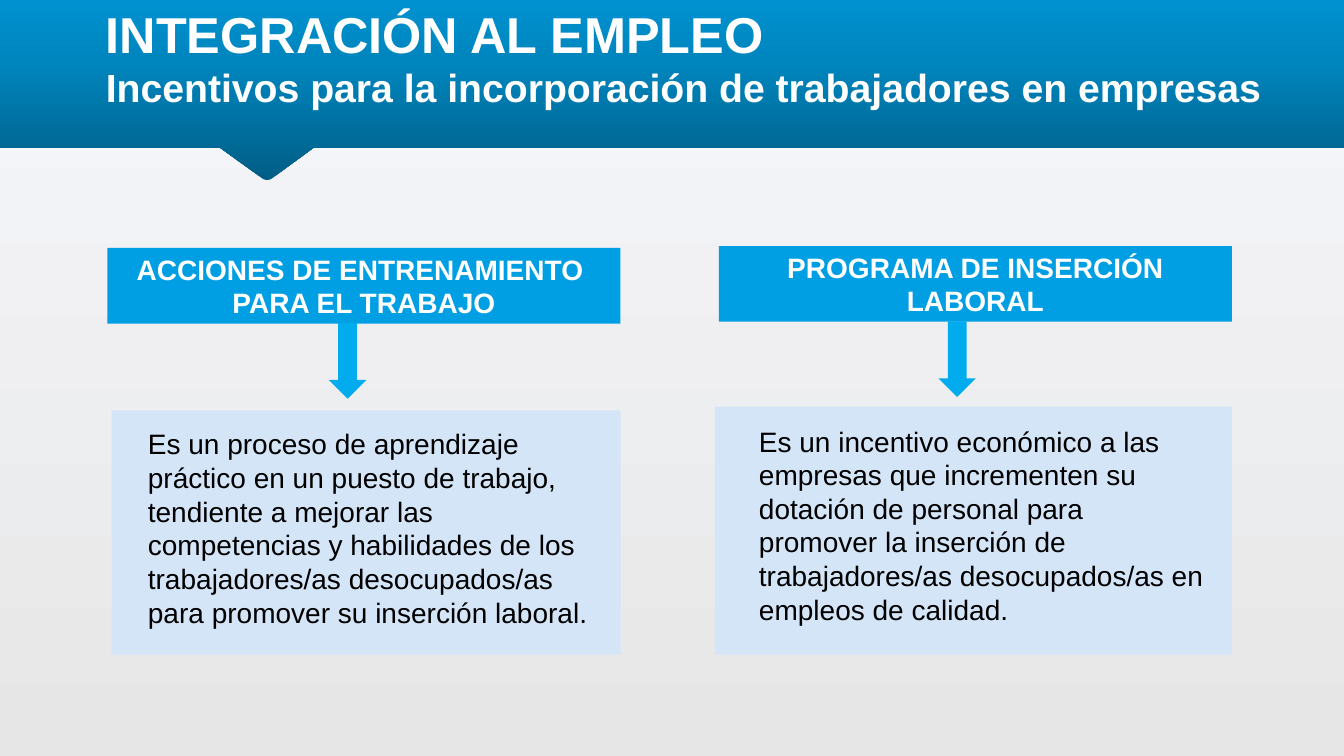
from copy import deepcopy

from pptx import Presentation
from pptx.dml.color import RGBColor
from pptx.enum.shapes import MSO_SHAPE
from pptx.enum.text import MSO_ANCHOR, MSO_AUTO_SIZE, PP_ALIGN
from pptx.oxml.ns import qn
from pptx.util import Pt

RECTANGLE = MSO_SHAPE.RECTANGLE
DOWN_ARROW = MSO_SHAPE.DOWN_ARROW
MIDDLE = MSO_ANCHOR.MIDDLE
LEFT, CENTER = PP_ALIGN.LEFT, PP_ALIGN.CENTER
NO_FIT, GROW = MSO_AUTO_SIZE.NONE, MSO_AUTO_SIZE.SHAPE_TO_FIT_TEXT

FONT = "Arial"
WIDTH, HEIGHT = 960, 540
COLORS = {
    "white": "FFFFFF", "subtitle": "FEFEFE", "text": "000000",
    "header": "009FE3", "arrow": "00ACED", "panel": "D4E5F7",
}
PAGE_STOPS = [(0.03, "F6F7FB"), (1, "E6E6E6")]
BANNER_STOPS = [(0, "005E86"), (0.5, "0086BF"), (1, "009FE3")]
BANNER_TOP, BANNER_BOTTOM = -43.2, 105.4
BANNER_OUTLINE = [
    (WIDTH, BANNER_TOP), (0, BANNER_TOP), (0, BANNER_BOTTOM),
    (157, BANNER_BOTTOM), (187.2, 127.4), (188.6, 128.2), (190.8, 128.7),
    (193, 128.2), (194.4, 127.4), (224.2, BANNER_BOTTOM),
    (WIDTH, BANNER_BOTTOM),
]

# Boxes are left, top, width, height in points.
COLUMNS = [
    {
        "header": ["ACCIONES DE ENTRENAMIENTO ", "PARA EL TRABAJO"],
        "header_box": (76.7, 177.1, 366.5, 54),
        "arrow_box": (234.9, 230.8, 26.8, 54),
        "panel_box": (79.7, 293.2, 363.6, 174.4),
        "body": "Es un proceso de aprendizaje práctico en un puesto de trabajo, "
                "tendiente a mejorar las competencias y habilidades de los "
                "trabajadores/as desocupados/as para promover su inserción laboral.",
        "body_box": (98.6, 301.4, 331.2, 152.6),
    },
    {
        "header": ["PROGRAMA DE INSERCIÓN LABORAL"],
        "header_box": (513.4, 175.8, 366.5, 54),
        "arrow_box": (670.3, 229.6, 26.8, 54),
        "panel_box": (510.6, 290.4, 369.4, 177.2),
        "body": "Es un incentivo económico a las empresas que incrementen su "
                "dotación de personal para promover la inserción de "
                "trabajadores/as desocupados/as en empleos de calidad.",
        "body_box": (535, 299.4, 334.8, 152.6),
    },
]


def points(values):
    return [Pt(value) for value in values]


def style_font(font, size, color, bold=False):
    font.name = FONT
    font.size = Pt(size)
    font.bold = bold
    font.color.rgb = RGBColor.from_string(COLORS[color])


def set_gradient(fill, element, stops, angle):
    """Fill with a linear gradient; angle counts counter-clockwise."""
    fill.gradient()
    fill.gradient_angle = angle
    stop_list = element.find(".//" + qn("a:gsLst"))
    while len(stop_list) < len(stops):
        stop_list.append(deepcopy(stop_list[0]))
    for stop, (position, color) in zip(fill.gradient_stops, stops):
        stop.position = position
        stop.color.rgb = RGBColor.from_string(color)


def add_banner(page):
    outline = [points(corner) for corner in BANNER_OUTLINE]
    builder = page.shapes.build_freeform(*outline[0])
    builder.add_line_segments(outline[1:], close=True)
    banner = builder.convert_to_shape()
    banner.shadow.inherit = False
    banner.line.fill.background()
    set_gradient(banner.fill, banner.element, BANNER_STOPS, 90)
    # Behind the title placeholder
    banner.element.getparent().insert(2, banner.element)


def fill_title(page, title, subtitle):
    box = page.shapes.title
    box.left, box.top, box.width, box.height = points((68.4, -24.5, 889.2, 129.6))
    frame = box.text_frame
    frame.auto_size = NO_FIT
    frame.vertical_anchor = MIDDLE
    para = frame.paragraphs[0]
    para.alignment = LEFT
    span = para.add_run()
    span.text = title
    style_font(span.font, 36, "white", bold=True)
    para.add_line_break()
    span = para.add_run()
    span.text = subtitle
    style_font(span.font, 28, "subtitle", bold=True)


def add_block(page, kind, box, color):
    block = page.shapes.add_shape(kind, *points(box))
    block.shadow.inherit = False
    block.fill.solid()
    block.fill.fore_color.rgb = RGBColor.from_string(COLORS[color])
    block.line.fill.background()
    return block


def add_header(page, box, lines):
    frame = add_block(page, RECTANGLE, box, "header").text_frame
    frame.vertical_anchor = MIDDLE
    frame.text = "\n".join(lines)
    for para in frame.paragraphs:
        para.alignment = CENTER
        style_font(para.font, 20, "white", bold=True)


def add_body(page, box, text):
    frame = page.shapes.add_textbox(*points(box)).text_frame
    frame.word_wrap = True
    frame.auto_size = GROW
    frame.text = text
    style_font(frame.paragraphs[0].font, 20, "text")


def main():
    deck = Presentation()
    deck.slide_width, deck.slide_height = points((WIDTH, HEIGHT))
    page = deck.slides.add_slide(deck.slide_layouts.get_by_name("Title Only"))
    set_gradient(page.background.fill, page.element, PAGE_STOPS, 270)
    add_banner(page)
    fill_title(page, "INTEGRACIÓN AL EMPLEO",
               "Incentivos para la incorporación de trabajadores en empresas")
    for column in COLUMNS:
        add_header(page, column["header_box"], column["header"])
        add_block(page, DOWN_ARROW, column["arrow_box"], "arrow")
        add_block(page, RECTANGLE, column["panel_box"], "panel")
        add_body(page, column["body_box"], column["body"])
    deck.save("out.pptx")


if __name__ == "__main__":
    main()
